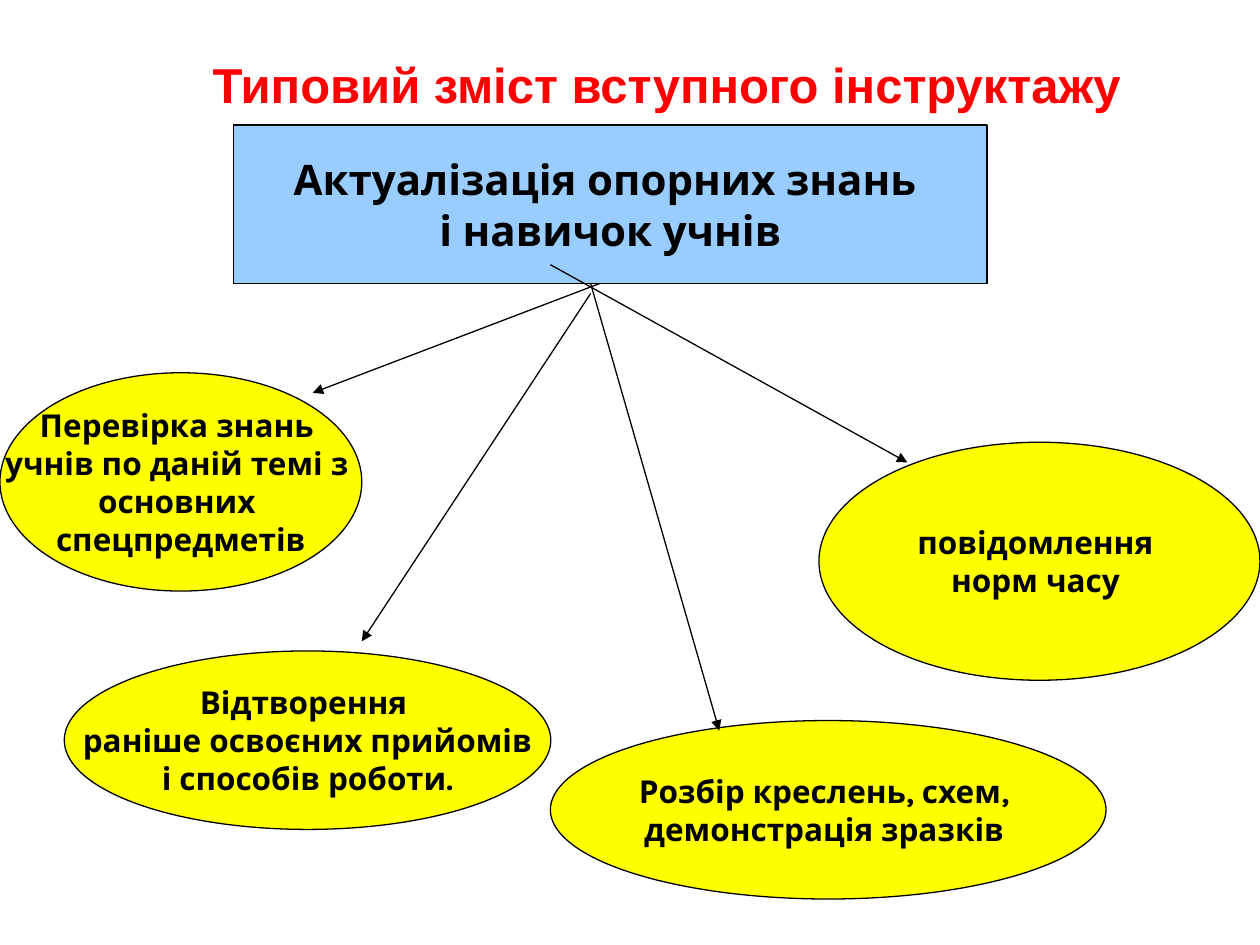
from dataclasses import dataclass

from lxml import etree
from pptx import Presentation
from pptx.dml.color import RGBColor
from pptx.enum.shapes import MSO_CONNECTOR, MSO_SHAPE
from pptx.enum.text import MSO_ANCHOR, PP_ALIGN
from pptx.oxml.ns import qn
from pptx.util import Pt

RECT, OVAL = MSO_SHAPE.RECTANGLE, MSO_SHAPE.OVAL
STRAIGHT = MSO_CONNECTOR.STRAIGHT
MIDDLE, CENTER = MSO_ANCHOR.MIDDLE, PP_ALIGN.CENTER


@dataclass(frozen=True)
class Theme:
    red: RGBColor = RGBColor(0xFF, 0, 0)
    blue: RGBColor = RGBColor(0x99, 0xCC, 0xFF)
    yellow: RGBColor = RGBColor(0xFF, 0xFF, 0)
    black: RGBColor = RGBColor(0, 0, 0)
    head: str = "Arial"
    body: str = "Karla"
    title: float = 28
    topic: float = 24
    item: float = 18
    line: float = 0.75


@dataclass(frozen=True)
class Box:
    left: float
    top: float
    width: float
    height: float
    text: str


@dataclass(frozen=True)
class Arrow:
    x1: float
    y1: float
    x2: float
    y2: float


THEME = Theme()
TITLE = Box(84, 24, 594, 47.5, "Типовий зміст вступного інструктажу")
TOPIC = Box(133.5, 71.5, 430.5, 90.5, "Актуалізація опорних знань \nі навичок учнів")
ITEMS = (
    Box(0, 213, 206.75, 124.75,
        "Перевірка знань \nучнів по даній темі з \nосновних \nспецпредметів"),
    Box(468, 252.75, 252, 136, "повідомлення \nнорм часу "),
    Box(36.75, 372, 278, 102,
        "Відтворення \n раніше освоєних прийомів \nі способів роботи."),
    Box(314.5, 411.75, 317.5, 102, "Розбір креслень, схем, \nдемонстрація зразків "),
)
ARROWS = (
    Arrow(337.5, 162, 411, 417.5),
    Arrow(337.5, 167.75, 206.75, 366.5),
    Arrow(342.75, 162, 178.75, 224.5),
    Arrow(314.5, 151.25, 518.5, 264.25),
)


def write(frame, text: str, face: str, size: float, color: RGBColor) -> None:
    frame.text = text
    frame.vertical_anchor = MIDDLE
    for para in frame.paragraphs:
        para.alignment = CENTER
        font = para.font
        font.name, font.size, font.bold = face, Pt(size), True
        font.color.rgb = color


def place(shape, box: Box) -> None:
    shape.left, shape.top = Pt(box.left), Pt(box.top)
    shape.width, shape.height = Pt(box.width), Pt(box.height)


def add_box(slide, box: Box, kind: MSO_SHAPE, fill: RGBColor, size: float) -> None:
    shape = slide.shapes.add_shape(kind, 0, 0, 0, 0)
    place(shape, box)
    shape.shadow.inherit = False
    shape.fill.solid()
    shape.fill.fore_color.rgb = fill
    shape.line.color.rgb = THEME.black
    shape.line.width = Pt(THEME.line)
    write(shape.text_frame, box.text, THEME.body, size, THEME.black)
    shape.text_frame.word_wrap = False


def add_arrow(slide, arrow: Arrow) -> None:
    link = slide.shapes.add_connector(
        STRAIGHT, Pt(arrow.x1), Pt(arrow.y1), Pt(arrow.x2), Pt(arrow.y2))
    link.line.color.rgb = THEME.black
    link.line.width = Pt(THEME.line)
    props = link.line._get_or_add_ln()
    etree.SubElement(props, qn("a:tailEnd"), type="triangle")
    etree.SubElement(link._element.spPr, qn("a:effectLst"))


def main() -> None:
    deck = Presentation()
    deck.slide_width, deck.slide_height = Pt(720), Pt(540)
    slide = deck.slides.add_slide(deck.slide_layouts[5])
    title = slide.shapes.title
    place(title, TITLE)
    write(title.text_frame, TITLE.text, THEME.head, THEME.title, THEME.red)
    add_box(slide, TOPIC, RECT, THEME.blue, THEME.topic)
    for item in ITEMS:
        add_box(slide, item, OVAL, THEME.yellow, THEME.item)
    for arrow in ARROWS:
        add_arrow(slide, arrow)
    deck.save("out.pptx")


if __name__ == "__main__":
    main()
